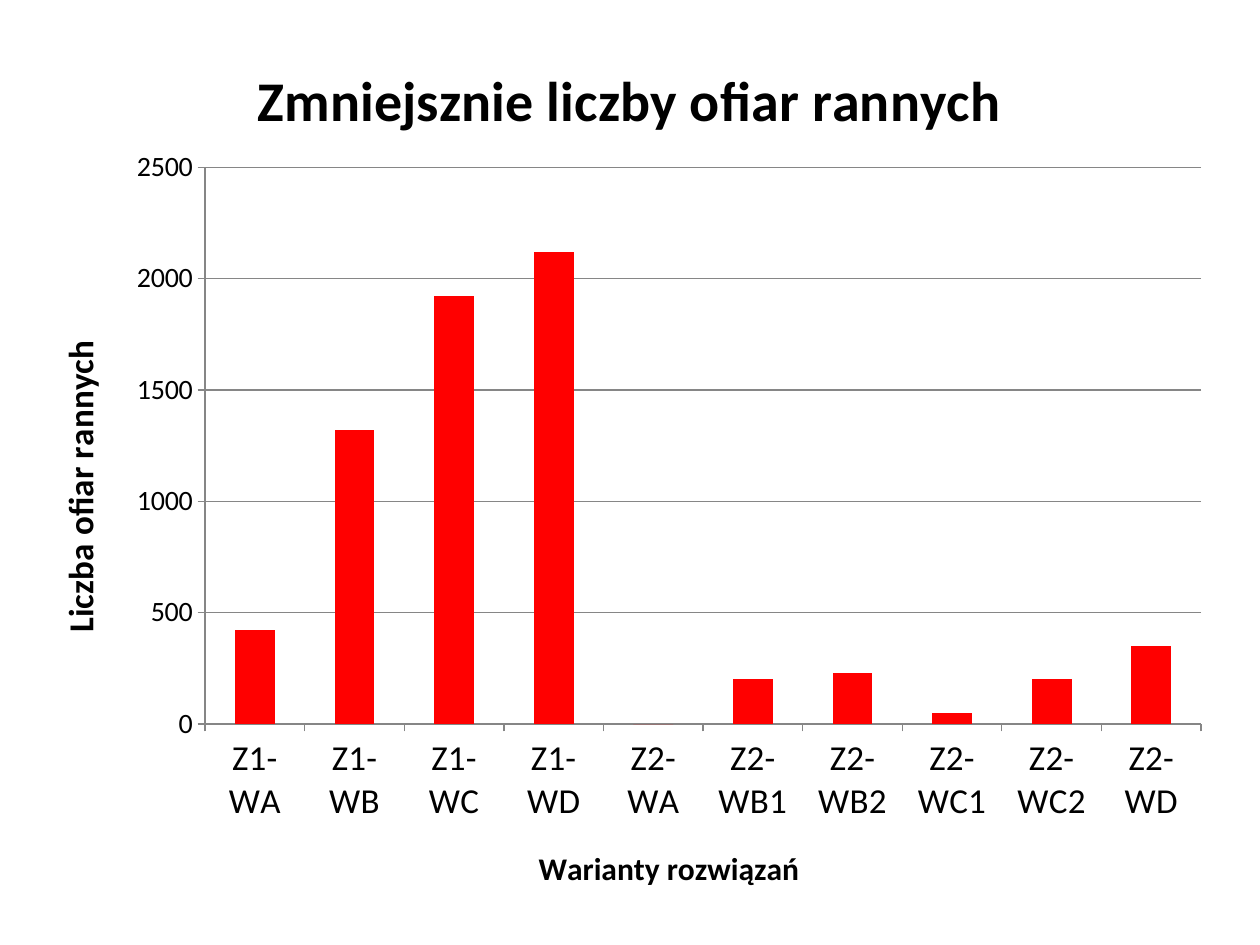
from pptx import Presentation
from pptx.chart.data import CategoryChartData as Data
from pptx.dml.color import RGBColor
from pptx.enum.chart import XL_CHART_TYPE as Kind, XL_TICK_MARK as Tick
from pptx.oxml import parse_xml
from pptx.oxml.ns import nsdecls
from pptx.util import Pt

# Content
TITLE = ("Zmniejsznie liczby ofiar rannych", 32)
X_NAME = ("Warianty rozwiązań", 18)
Y_NAME = ("Liczba ofiar rannych", 20)
INJURED = [
    ("Z1-WA", 420), ("Z1-WB", 1320), ("Z1-WC", 1920), ("Z1-WD", 2120),
    ("Z2-WA", 0), ("Z2-WB1", 200), ("Z2-WB2", 230), ("Z2-WC1", 50),
    ("Z2-WC2", 200), ("Z2-WD", 350),
]
FONT, BLACK, GRAY, RED = "Calibri", "000000", "868686", "FF0000"
# Inner plot area as shares of the chart
PLOT = {"x": 0.143, "y": 0.158, "w": 0.837, "h": 0.624}


def color(code):
    return RGBColor.from_string(code)


def style(font, size, bold=False):
    font.name, font.size, font.bold = FONT, Pt(size), bold
    font.color.rgb = color(BLACK)


def label(owner, text, size):
    frame = owner.text_frame
    frame.text = text
    style(frame.paragraphs[0].runs[0].font, size, True)


def rule(line):
    line.color.rgb = color(GRAY)
    line.width = Pt(0.75)


# Slide
deck = Presentation()
deck.slide_width, deck.slide_height = Pt(720), Pt(540)
slide = deck.slides.add_slide(deck.slide_layouts[6])

# Chart
data = Data(number_format="0")
data.categories = [name for name, _ in INJURED]
data.add_series("Series 1", [count for _, count in INJURED])
chart = slide.shapes.add_chart(
    Kind.COLUMN_CLUSTERED, Pt(20), Pt(15), Pt(680), Pt(510), data).chart
style(chart.font, 10)
chart.has_legend = False
chart.has_title = True
label(chart.chart_title, *TITLE)
chart.chart_title.include_in_layout = False

# Columns
plot = chart.plots[0]
plot.gap_width = 150
plot.vary_by_categories = False
bars = plot.series[0]
bars.format.fill.solid()
bars.format.fill.fore_color.rgb = color(RED)
bars.invert_if_negative = False

# Axes
for axis, name, size in ((chart.category_axis, X_NAME, 20),
                         (chart.value_axis, Y_NAME, 16)):
    label(axis.axis_title, *name)
    style(axis.tick_labels.font, size)
    axis.major_tick_mark, axis.minor_tick_mark = Tick.OUTSIDE, Tick.NONE
    rule(axis.format.line)
scale = chart.value_axis
scale.minimum_scale, scale.maximum_scale, scale.major_unit = 0, 2500, 500
scale.tick_labels.number_format = "0"
scale.tick_labels.number_format_is_linked = False
scale.has_major_gridlines = True
rule(scale.major_gridlines.format.line)

# Plot area placement
modes = "".join(f'<c:{key}Mode val="edge"/>' for key in "xy")
sizes = "".join(f'<c:{key} val="{val}"/>' for key, val in PLOT.items())
area = chart.element.chart.plotArea
for old in area.xpath("c:layout"):
    area.remove(old)
area.insert(0, parse_xml(
    f'<c:layout {nsdecls("c")}><c:manualLayout><c:layoutTarget val="inner"/>'
    f'{modes}{sizes}</c:manualLayout></c:layout>'))

deck.save("out.pptx")
